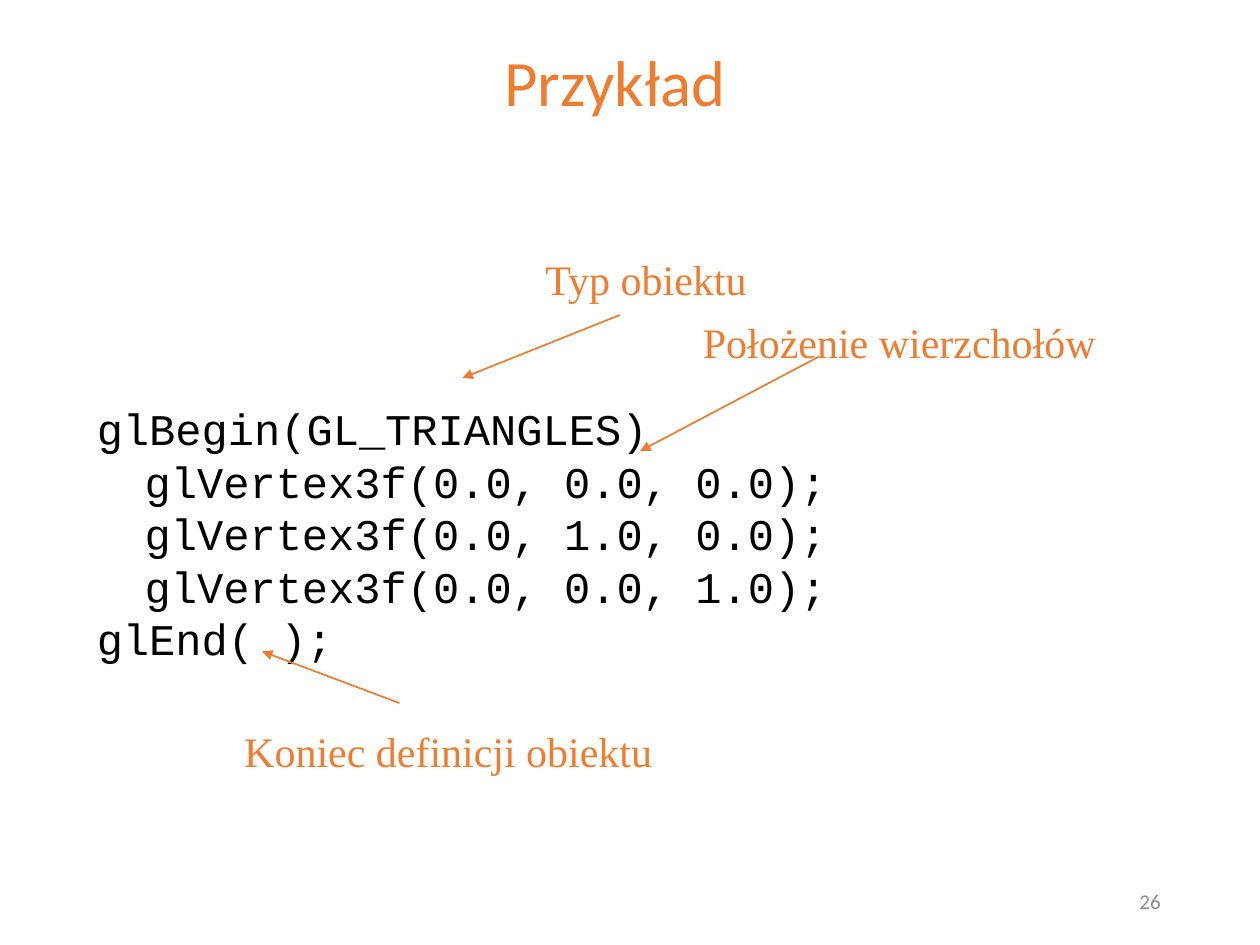
import pptx
import pptx.util
import pptx.dml.color
import pptx.enum.shapes
import pptx.enum.text
import pptx.oxml.ns
from lxml import etree

Inches = pptx.util.Inches
Pt = pptx.util.Pt
ALIGN = pptx.enum.text.PP_ALIGN
ANCHOR = pptx.enum.text.MSO_ANCHOR

COLORS = {"accent": "ED7D31", "code": "000000", "number": "8C8C8C"}

CODE_LINES = [
    ("glBegin(GL_TRIANGLES)", False),
    ("glVertex3f(0.0, 0.0, 0.0);", True),
    ("glVertex3f(0.0, 1.0, 0.0);", True),
    ("glVertex3f(0.0, 0.0, 1.0);", True),
    ("glEnd( );", False),
]

LABELS = [
    ("Typ obiektu", 4.23, 1.96, 1.81),
    ("Położenie wierzchołów", 5.48, 2.46, 3.35),
    ("Koniec definicji obiektu", 1.84, 5.71, 3.47),
]

ARROWS = [
    ((4.92, 2.5), (3.67, 3)),
    ((6.5, 2.83), (5.08, 3.58)),
    ((3.17, 5.58), (2.08, 5.17)),
]


def color(name):
    return pptx.dml.color.RGBColor.from_string(COLORS[name])


def add_text(slide, box, lines, font, size, color_name,
             align=ALIGN.LEFT, anchor=ANCHOR.TOP, wrap=True):
    shape = slide.shapes.add_textbox(*[Inches(value) for value in box])
    frame = shape.text_frame
    frame.word_wrap = wrap
    frame.vertical_anchor = anchor
    frame.text = "\n".join(lines)
    for paragraph in frame.paragraphs:
        paragraph.alignment = align
        paragraph.font.name = font
        paragraph.font.size = Pt(size)
        paragraph.font.color.rgb = color(color_name)
    return frame


def add_code(slide):
    frame = add_text(slide, (0.67, 3.08, 8.5, 2.33), [text for text, _ in CODE_LINES],
                     "Courier New", 25, "code")
    frame.margin_top = Inches(0.11)
    for paragraph, (_, indented) in zip(frame.paragraphs, CODE_LINES):
        paragraph.line_spacing = Pt(30)
        if indented:
            paragraph._p.get_or_add_pPr().set("marL", str(Inches(0.38)))


def add_label(slide, text, left, top, width):
    add_text(slide, (left, top, width, 0.5), [text], "Times New Roman", 24, "accent",
             wrap=False)


def add_arrow(slide, start, end):
    points = [Inches(value) for value in start + end]
    connector = slide.shapes.add_connector(
        pptx.enum.shapes.MSO_CONNECTOR.STRAIGHT, *points)
    connector.line.color.rgb = color("accent")
    connector.line.width = Pt(1)
    qn = pptx.oxml.ns.qn
    etree.SubElement(connector.line._get_or_add_ln(), qn("a:tailEnd"), type="triangle")
    etree.SubElement(connector._element.spPr, qn("a:effectLst"))


def main():
    presentation = pptx.Presentation()
    presentation.slide_width = Inches(10)
    presentation.slide_height = Inches(7.5)
    slide = presentation.slides.add_slide(presentation.slide_layouts[6])

    add_text(slide, (7.06, 6.95, 2.25, 0.4), ["26"], "Calibri", 12, "number",
             align=ALIGN.RIGHT, anchor=ANCHOR.MIDDLE)
    add_text(slide, (0.17, 0.28, 9.42, 0.72), ["Przykład"], "Calibri", 37, "accent",
             align=ALIGN.CENTER)
    add_code(slide)
    for label in LABELS:
        add_label(slide, *label)
    for start, end in ARROWS:
        add_arrow(slide, start, end)

    presentation.save("out.pptx")


if __name__ == "__main__":
    main()
